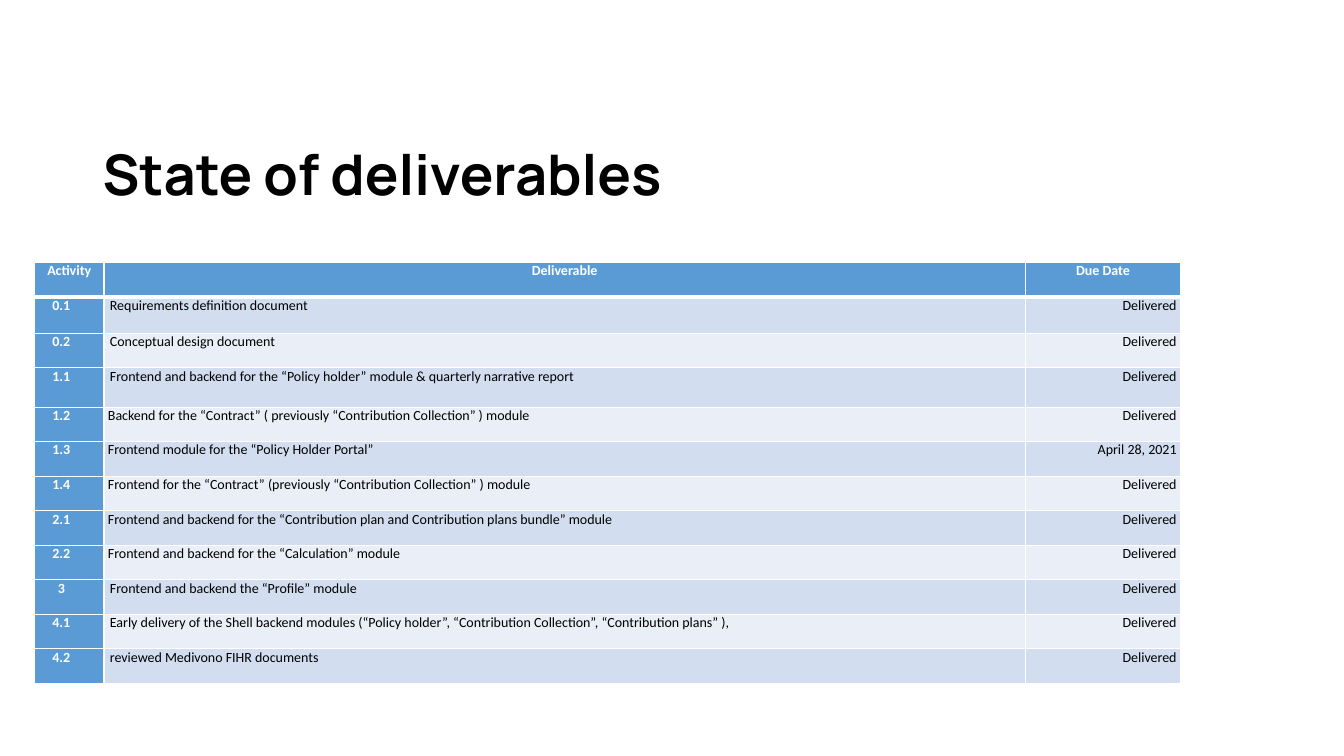
import pptx
import pptx.util
import pptx.dml.color
import pptx.enum.text
import pptx.oxml
import pptx.oxml.ns

Cm = pptx.util.Cm
Pt = pptx.util.Pt
ALIGN = pptx.enum.text.PP_ALIGN

BLUE, PALE, PALER = "5B9BD5", "D2DEEF", "EAEFF7"
WHITE, BLACK = "FFFFFF", "000000"
HEADERS = ["Activity", "Deliverable", "Due Date"]
INDENTED = {"align": ALIGN.LEFT, "indent": 0.05, "after": 6}
PLAIN = {"align": ALIGN.LEFT}
JUSTIFIED = {"align": ALIGN.JUSTIFY, "indent": 0.05, "after": 6}
DELIVERABLES = [
    ("0.1", "Requirements definition document", "Delivered", INDENTED),
    ("0.2", "Conceptual design document", "Delivered", INDENTED),
    ("1.1", "Frontend and backend for the “Policy holder” module & quarterly narrative report",
     "Delivered", INDENTED),
    ("1.2", "Backend for the “Contract” ( previously “Contribution Collection” ) module",
     "Delivered", PLAIN),
    ("1.3", "Frontend module for the “Policy Holder Portal”", "April 28, 2021", PLAIN),
    ("1.4", "Frontend for the “Contract” (previously “Contribution Collection” ) module",
     "Delivered", PLAIN),
    ("2.1", "Frontend and backend for the “Contribution plan and Contribution plans bundle” module",
     "Delivered", PLAIN),
    ("2.2", "Frontend and backend for the “Calculation” module", "Delivered", PLAIN),
    ("3", "Frontend and backend the “Profile” module", "Delivered", JUSTIFIED),
    ("4.1", "Early delivery of the Shell backend modules (“Policy holder”, "
     "“Contribution Collection”, “Contribution plans” ),", "Delivered", JUSTIFIED),
    ("4.2", "reviewed Medivono FIHR documents", "Delivered", JUSTIFIED),
]
COLUMN_WIDTHS = [1.75, 23.22, 3.91]
ROW_HEIGHT = 0.87
TALL_ROWS = {1: 0.92, 3: 0.99}


def rgb(value):
    return pptx.dml.color.RGBColor.from_string(value)


def write(tf, text, size=10, font="Calibri", color=BLACK, bold=False,
          align=ALIGN.LEFT, indent=0, after=0, spacing=1.0):
    p = tf.paragraphs[0]
    p.alignment = align
    p.space_after = Pt(after)
    p.line_spacing = spacing
    if indent:
        p._p.get_or_add_pPr().set("marL", str(Cm(indent)))
    r = p.add_run()
    r.text = text
    r.font.size = Pt(size)
    r.font.name = font
    r.font.bold = bold
    r.font.color.rgb = rgb(color)


def set_borders(cell, **widths):
    tc_pr = cell._tc.get_or_add_tcPr()
    for i, side in enumerate(["L", "R", "T", "B"]):
        width = Pt(widths.get(side, 1))
        tc_pr.insert(i, pptx.oxml.parse_xml(
            f'<a:ln{side} {pptx.oxml.ns.nsdecls("a")} w="{width}"><a:solidFill>'
            f'<a:srgbClr val="{WHITE}"/></a:solidFill></a:ln{side}>'))


def fill_cell(cell, text, fill, right=0.1, borders=None, **fmt):
    cell.margin_left, cell.margin_right = Cm(0.1), Cm(right)
    cell.margin_top = cell.margin_bottom = 0
    cell.fill.solid()
    cell.fill.fore_color.rgb = rgb(fill)
    set_borders(cell, **(borders or {}))
    write(cell.text_frame, text, **fmt)


def add_title(slide, left, top, width, height):
    tf = slide.shapes.add_textbox(Cm(left), Cm(top), Cm(width), Cm(height)).text_frame
    tf.word_wrap = True
    tf.vertical_anchor = pptx.enum.text.MSO_ANCHOR.MIDDLE
    write(tf, "State of deliverables", size=40, font="Manrope", bold=True, spacing=0.9)


def add_deliverables(slide, left, top, width, height):
    table = slide.shapes.add_table(len(DELIVERABLES) + 1, len(HEADERS), Cm(left), Cm(top),
                                   Cm(width), Cm(height)).table
    table.first_row = table.horz_banding = False
    for column, column_width in zip(table.columns, COLUMN_WIDTHS):
        column.width = Cm(column_width)
    for i, row in enumerate(table.rows):
        row.height = Cm(TALL_ROWS.get(i, ROW_HEIGHT))
    for j, header in enumerate(HEADERS):
        fill_cell(table.cell(0, j), header, BLUE, borders={"B": 3}, color=WHITE,
                  bold=True, align=ALIGN.CENTER, after=6)
    for i, (activity, deliverable, due, fmt) in enumerate(DELIVERABLES, 1):
        band = PALE if i % 2 else PALER
        fill_cell(table.cell(i, 0), activity, BLUE, right=0.55,
                  borders={"T": 3} if i == 1 else None, color=WHITE, bold=True,
                  align=ALIGN.CENTER, indent=0.05, after=6)
        for j, text, cell_fmt in [(1, deliverable, fmt),
                                  (2, due, {**INDENTED, "align": ALIGN.RIGHT})]:
            fill_cell(table.cell(i, j), text, band,
                      borders={"T": 3} if i == 1 else None, **cell_fmt)


def main():
    prs = pptx.Presentation()
    prs.slide_width, prs.slide_height = Cm(33.87), Cm(19.05)
    slide = prs.slides.add_slide(prs.slide_layouts[6])
    add_deliverables(slide, 0.87, 6.61, 28.88, 10.61)
    add_title(slide, 2.34, 3.15, 29.21, 2.62)
    prs.save("out.pptx")


if __name__ == "__main__":
    main()
